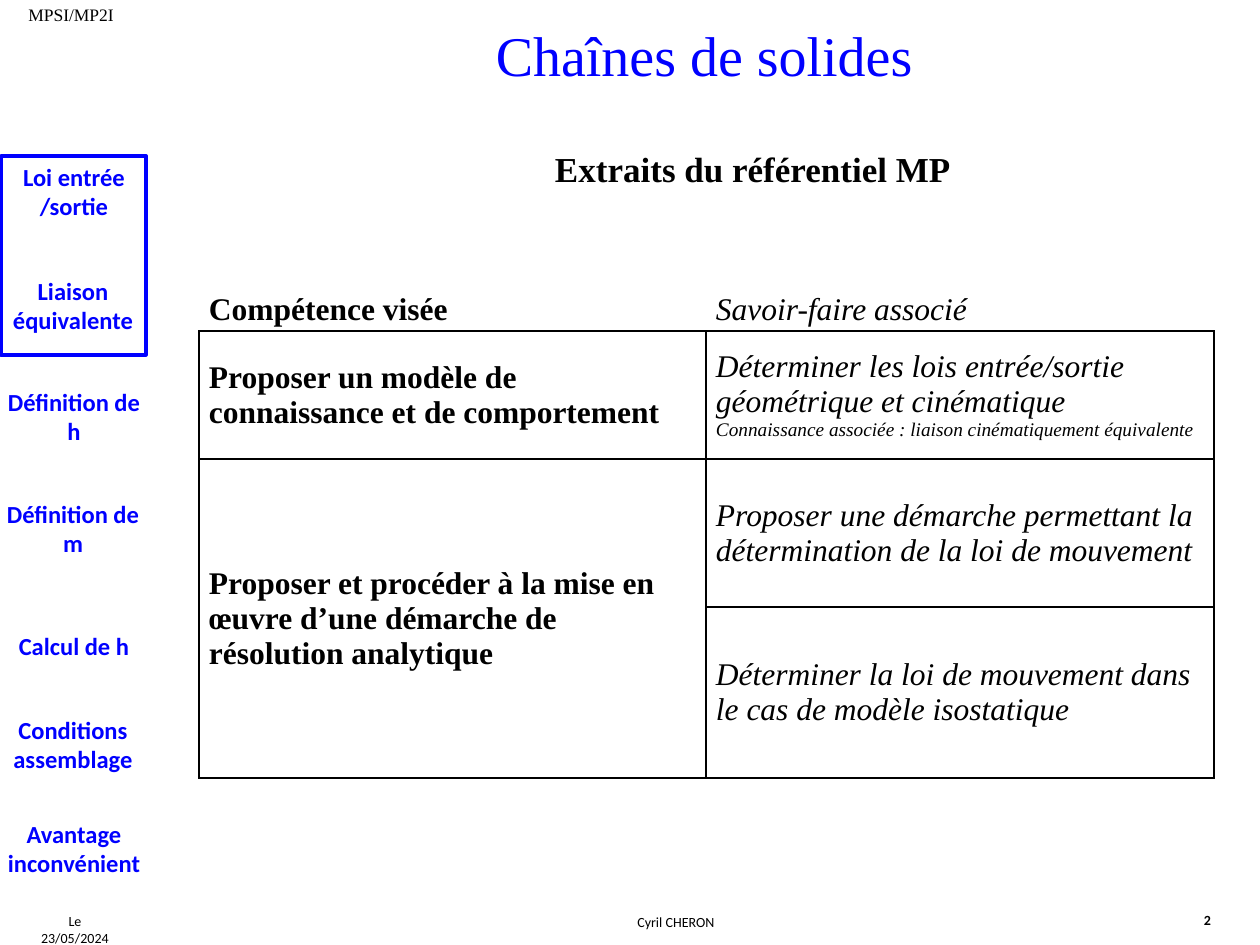
"""Build the slide on solid chains: side menu, title and skills table."""
from lxml import etree
from pptx import Presentation
from pptx.dml.color import RGBColor
from pptx.enum.shapes import MSO_SHAPE
from pptx.enum.text import MSO_ANCHOR, MSO_AUTO_SIZE, PP_ALIGN
from pptx.oxml.ns import qn
from pptx.util import Emu, Pt

RECT = MSO_SHAPE.RECTANGLE
MIDDLE = MSO_ANCHOR.MIDDLE
GROW = MSO_AUTO_SIZE.SHAPE_TO_FIT_TEXT
LEFT, CENTER = PP_ALIGN.LEFT, PP_ALIGN.CENTER

COLORS = {"ink": "000000", "blue": "0000FF", "white": "FFFFFF"}
SERIF, SANS = "Times New Roman", "Calibri"

STYLES = {
    "foot": {"name": SANS, "size": 8, "color": "ink"},
    "page": {"name": SANS, "size": 8, "color": "ink", "bold": True},
    "class": {"name": SERIF, "size": 10, "color": "ink"},
    "menu": {"name": SANS, "size": 14, "color": "blue", "bold": True},
    "title": {"name": SERIF, "size": 32, "color": "blue"},
    "head": {"name": SERIF, "size": 20, "color": "ink", "bold": True},
    "skill": {"name": SERIF, "size": 18, "color": "ink", "bold": True, "italic": False},
    "task": {"name": SERIF, "size": 18, "color": "ink", "bold": False, "italic": True},
    "note": {"name": SERIF, "size": 11, "color": "ink", "bold": False, "italic": True},
}

LABELS = [
    ("Le 23/05/2024", "foot", (21, 907, 108, 30), CENTER, False),
    ("Cyril CHERON", "foot", (157, 908, 1038, 30), CENTER, True),
    ("2", "page", (1191, 905, 49, 30), LEFT, False),
    ("MPSI/MP2I", "class", (11, -2, 120, 34), CENTER, True),
    ("Chaînes de solides", "title", (481, 15, 447, 81), CENTER, False),
    ("Extraits du référentiel MP", "head", (542, 141, 423, 55), LEFT, False),
]

MENU = [
    ("Loi entrée /sortie", 1, 156, 72),
    ("Liaison équivalente", 0, 270, 72),
    ("Définition de h", 1, 381, 102),
    ("Définition de m", 0, 493, 72),
    ("Calcul de h", 1, 625, 43),
    ("Conditions assemblage", 0, 709, 72),
    ("Avantage inconvénient", 1, 813, 72),
]
MENU_W = 146
FRAME = (1, 156, 145, 199)

TABLE_AT = (199, 288)
COLS = [507, 508]
ROWS = [43, 128, 148, 171]
CELLS = [
    [[("Compétence visée", "skill")], [("Savoir-faire associé", "task")]],
    [[("Proposer un modèle de connaissance et de comportement", "skill")],
     [("Déterminer les lois entrée/sortie géométrique et cinématique", "task"),
      ("Connaissance associée : liaison cinématiquement équivalente", "note")]],
    [[("Proposer et procéder à la mise en œuvre d’une démarche de résolution analytique", "skill")],
     [("Proposer une démarche permettant la détermination de la loi de mouvement", "task")]],
    [[], [("Déterminer la loi de mouvement dans le cas de modèle isostatique", "task")]],
]


def px(n):
    return Emu(round(n * 914400 / 126))


def rgb(key):
    return RGBColor.from_string(COLORS[key])


def style(font, key):
    for name, value in STYLES[key].items():
        if name == "color":
            font.color.rgb = rgb(value)
        else:
            setattr(font, name, Pt(value) if name == "size" else value)


def pad(part, side, edge):
    part.margin_left = part.margin_right = px(side)
    part.margin_top = part.margin_bottom = px(edge)


def write(frame, lines, align):
    for i, (text, key) in enumerate(lines):
        para = frame.add_paragraph() if i else frame.paragraphs[0]
        para.alignment = align
        run = para.add_run()
        run.text = text
        style(run.font, key)


def label(slide, text, key, box, align, wrap, side=13):
    frame = slide.shapes.add_textbox(*map(px, box)).text_frame
    frame.word_wrap = wrap
    frame.auto_size = GROW
    pad(frame, side, 6)
    write(frame, [(text, key)], align)


def border(cell, sides):
    props = cell._tc.get_or_add_tcPr()
    for i, (side, color) in enumerate(sides.items()):
        line = etree.Element(qn("a:ln" + side), w=str(Pt(1)))
        fill = etree.SubElement(line, qn("a:solidFill"))
        etree.SubElement(fill, qn("a:srgbClr"), val=COLORS[color])
        props.insert(i, line)


def grid(slide):
    box = (*TABLE_AT, sum(COLS), sum(ROWS))
    table = slide.shapes.add_table(len(ROWS), len(COLS), *map(px, box)).table
    table.first_row = table.horz_banding = False
    for col, width in zip(table.columns, COLS):
        col.width = px(width)
    for row, height in zip(table.rows, ROWS):
        row.height = px(height)
    table.cell(2, 0).merge(table.cell(3, 0))
    for r, row in enumerate(CELLS):
        edge = "ink" if r else "white"
        for c, lines in enumerate(row):
            cell = table.cell(r, c)
            cell.fill.background()
            cell.vertical_anchor = MIDDLE
            pad(cell, 10, 0)
            border(cell, {"L": edge, "R": edge, "T": edge, "B": "ink"})
            write(cell.text_frame, lines, LEFT)


def main():
    deck = Presentation()
    deck.slide_width, deck.slide_height = px(1260), px(945)
    slide = deck.slides.add_slide(deck.slide_layouts[6])
    for item in LABELS:
        label(slide, *item)
    for text, x, y, h in MENU:
        label(slide, text, "menu", (x, y, MENU_W, h), CENTER, True, side=5)
    frame = slide.shapes.add_shape(RECT, *map(px, FRAME))
    frame.shadow.inherit = False
    frame.fill.background()
    frame.line.color.rgb = rgb("blue")
    frame.line.width = Pt(2)
    grid(slide)
    deck.save("out.pptx")


if __name__ == "__main__":
    main()
